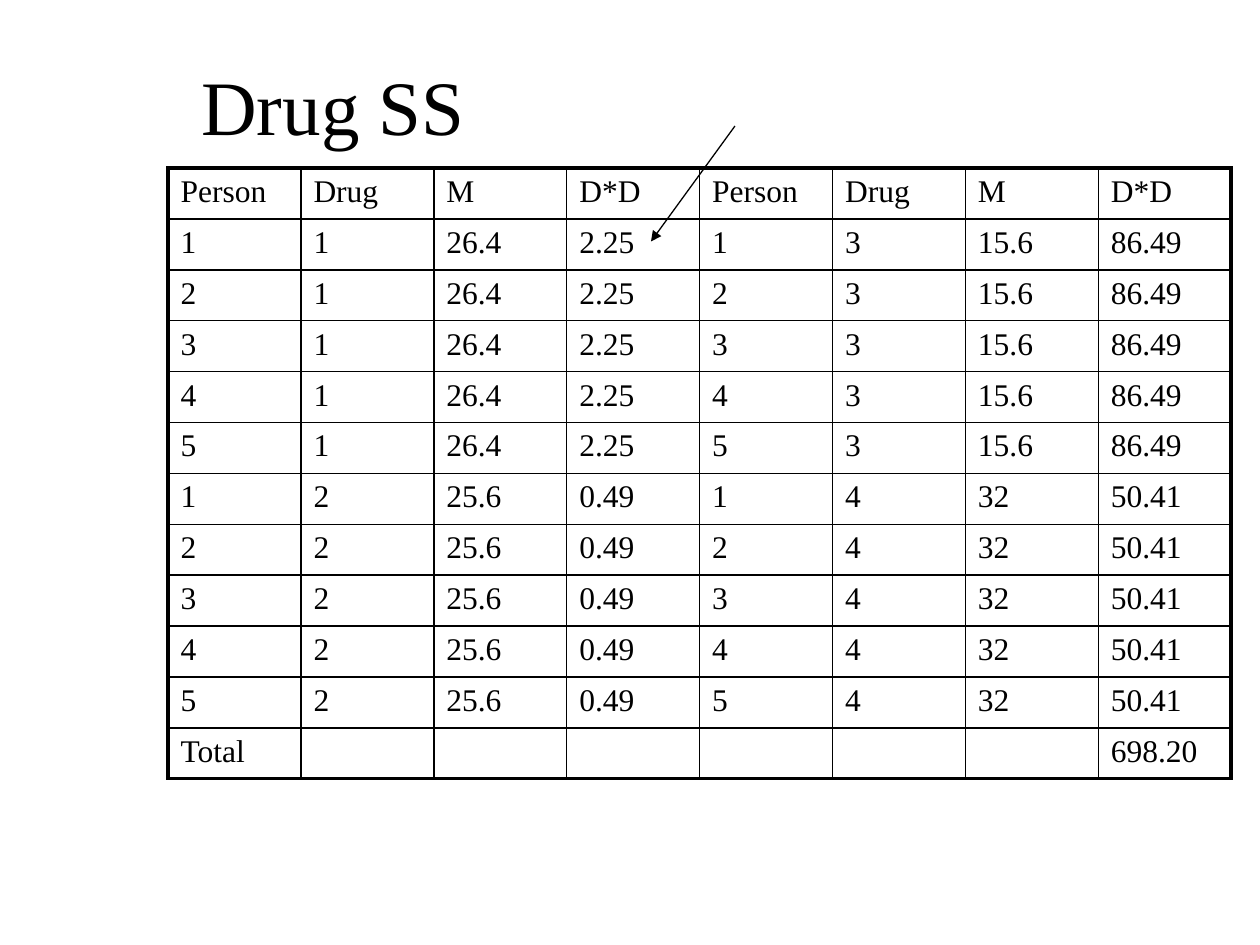
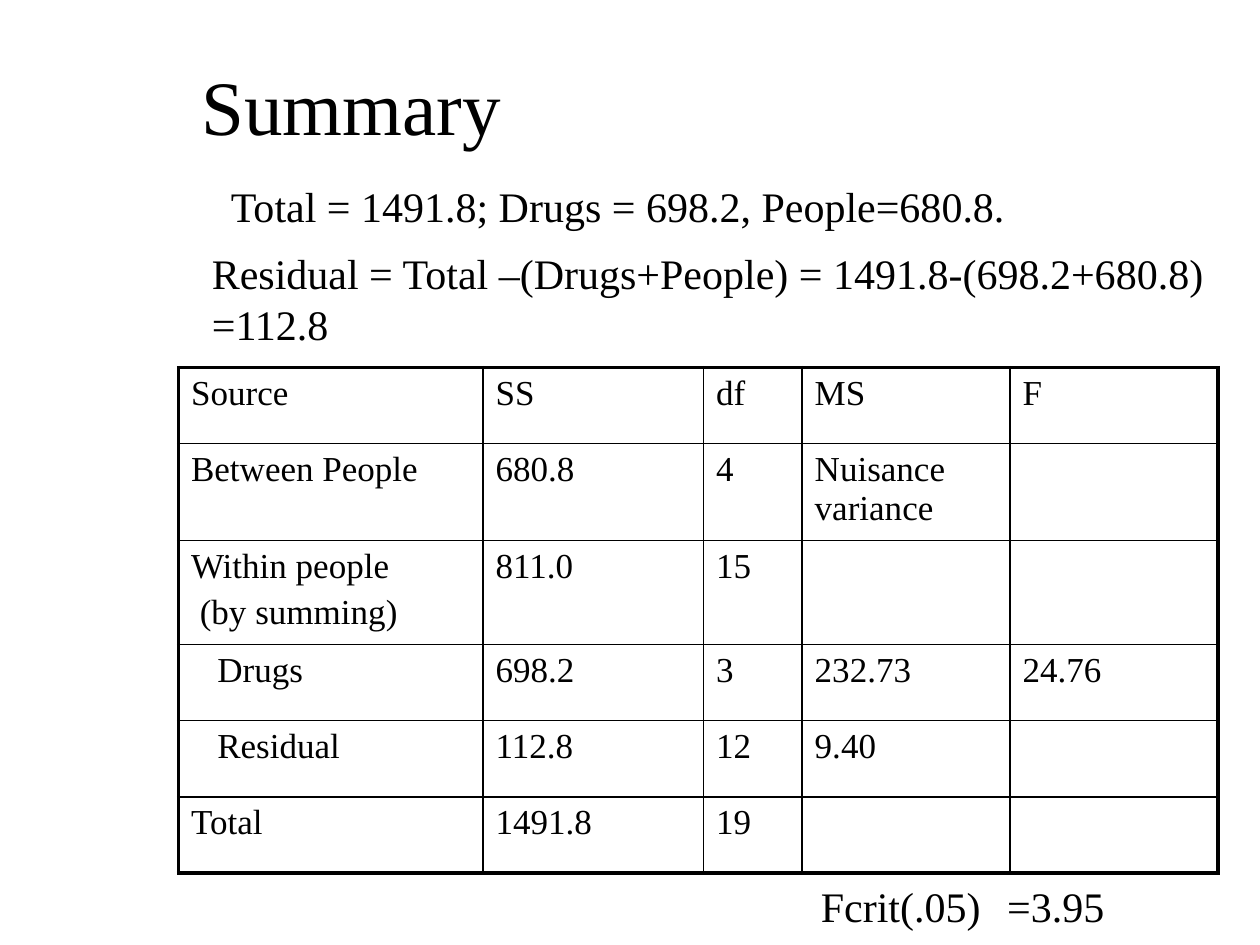
from dataclasses import dataclass

from pptx import Presentation
from pptx.dml.color import RGBColor
from pptx.enum.shapes import MSO_CONNECTOR
from pptx.enum.text import MSO_ANCHOR, MSO_AUTO_SIZE
from pptx.oxml.ns import qn
from pptx.util import Inches, Pt
from lxml.etree import SubElement

COLUMNS, ROWS = 120, 90
PEOPLE = range(1, 6)
DRUG_MEANS = {1: 26.4, 2: 25.6, 3: 15.6, 4: 32}
GRAND_MEAN = sum(DRUG_MEANS.values()) / len(DRUG_MEANS)


@dataclass(frozen=True)
class Theme:
    """Colours, type sizes and line widths of the deck."""

    font: str = "Times New Roman"
    ink: str = "000000"
    paper: str = "FFFFFF"
    title: int = 44
    body: int = 24
    summary: int = 20
    scores: int = 18
    frame: float = 2.25
    rule: float = 1
    arrow: float = 0.75


def write(frame, text, *, theme, size, indents=None):
    """Fill a text frame, one paragraph per line, with optional indents by line."""
    for position, line in enumerate(text.split("\n")):
        paragraph = frame.add_paragraph() if position else frame.paragraphs[0]
        if indents and line in indents:
            paragraph._p.get_or_add_pPr().set("marL", str(Pt(indents[line])))
        if position and indents:
            paragraph.space_before = Pt(size * 0.2)
        paragraph.font.name = theme.font
        paragraph.font.size = Pt(size)
        paragraph.font.color.rgb = RGBColor.from_string(theme.ink)
        paragraph.add_run().text = line


class Deck:
    """Holds the theme and the current slide, measured on a grid."""

    def __init__(self, theme):
        """Start an empty deck."""
        self.theme = theme
        self.presentation = Presentation()
        self.presentation.slide_width = Inches(10)
        self.presentation.slide_height = Inches(7.5)
        self.slide = None

    def x(self, columns):
        """Turn grid columns into a length."""
        return round(self.presentation.slide_width * columns / COLUMNS)

    def y(self, rows):
        """Turn grid rows into a length."""
        return round(self.presentation.slide_height * rows / ROWS)

    def box(self, left, top, width, height):
        """Turn a grid area into slide lengths."""
        return self.x(left), self.y(top), self.x(width), self.y(height)

    def add_slide(self, title):
        """Start a slide with its title."""
        self.slide = self.presentation.slides.add_slide(self.presentation.slide_layouts[6])
        self.slide.background.fill.solid()
        self.slide.background.fill.fore_color.rgb = RGBColor.from_string(self.theme.paper)
        frame = self.slide.shapes.add_textbox(*self.box(18, 4, 93, 12)).text_frame
        frame.word_wrap = True
        frame.vertical_anchor = MSO_ANCHOR.MIDDLE
        write(frame, title, theme=self.theme, size=self.theme.title)

    def add_text(self, text, *area):
        """Add body text that keeps its own line breaks."""
        frame = self.slide.shapes.add_textbox(*self.box(*area)).text_frame
        frame.word_wrap = False
        frame.auto_size = MSO_AUTO_SIZE.SHAPE_TO_FIT_TEXT
        write(frame, text, theme=self.theme, size=self.theme.body)

    def add_table(self, records, left, top, widths, heights, size, indents=None):
        """Add a ruled table with a heavier outer frame."""
        area = self.box(left, top, sum(widths), sum(heights))
        table = self.slide.shapes.add_table(len(records), len(widths), *area).table
        table.first_row = table.horz_banding = False
        for column, width in zip(table.columns, widths):
            column.width = self.x(width)
        for row, height in zip(table.rows, heights):
            row.height = self.y(height)
        for r, record in enumerate(records):
            for c, value in enumerate(record):
                cell = table.cell(r, c)
                write(cell.text_frame, value, theme=self.theme, size=size, indents=indents)
                outer = {"L": c == 0, "R": c == len(widths) - 1,
                         "T": r == 0, "B": r == len(records) - 1}
                self.rule_cell(cell, outer)
                cell.fill.background()

    def rule_cell(self, cell, outer):
        """Draw the four borders of a cell."""
        properties = cell._tc.get_or_add_tcPr()
        for side, is_outer in outer.items():
            width = self.theme.frame if is_outer else self.theme.rule
            border = SubElement(properties, qn(f"a:ln{side}"), w=str(Pt(width)))
            fill = SubElement(border, qn("a:solidFill"))
            SubElement(fill, qn("a:srgbClr"), val=self.theme.ink)

    def add_arrow(self, start, end):
        """Draw an arrow between two grid points."""
        arrow = self.slide.shapes.add_connector(
            MSO_CONNECTOR.STRAIGHT,
            self.x(start[0]), self.y(start[1]), self.x(end[0]), self.y(end[1]))
        arrow.line.color.rgb = RGBColor.from_string(self.theme.ink)
        arrow.line.width = Pt(self.theme.arrow)
        SubElement(arrow.line._get_or_add_ln(), qn("a:tailEnd"), type="triangle")
        SubElement(arrow._element.spPr, qn("a:effectLst"))


def score(person, drug):
    """Give one person's score cells for a drug."""
    mean = DRUG_MEANS[drug]
    return [str(person), str(drug), f"{mean:g}", f"{(mean - GRAND_MEAN) ** 2:.2f}"]


def drug_slide(deck):
    """Build the sum of squares for drugs."""
    deck.add_slide("Drug SS")
    total = len(PEOPLE) * sum((mean - GRAND_MEAN) ** 2 for mean in DRUG_MEANS.values())
    records = [["Person", "Drug", "M", "D*D"] * 2]
    records += [score(person, first) + score(person, second)
                for first, second in ((1, 3), (2, 4)) for person in PEOPLE]
    records.append(["Total"] + [""] * 6 + [f"{total:.2f}"])
    deck.add_table(records, 16, 16, [12.66] * 8, [4.85] * 12, deck.theme.scores)
    deck.add_arrow((70, 12), (62, 23))


def summary_slide(deck):
    """Build the summary of sources of variance."""
    deck.add_slide("Summary")
    deck.add_text("Total = 1491.8; Drugs = 698.2, People=680.8.", 20.8, 16.6, 76.3, 6)
    deck.add_text("Residual = Total –(Drugs+People) = 1491.8-(698.2+680.8)\n=112.8",
                  19, 23, 97.2, 10.8)
    records = [
        ["Source", "SS", "df", "MS", "F"],
        ["Between People", "680.8", "4", "Nuisance variance", ""],
        ["Within people\n(by summing)", "811.0", "15", "", ""],
        ["Drugs", "698.2", "3", "232.73", "24.76"],
        ["Residual", "112.8", "12", "9.40", ""],
        ["Total", "1491.8", "19", "", ""],
    ]
    deck.add_table(records, 17, 35, [29, 21, 9.4, 19.8, 19.8],
                   [7.25, 9.25, 9.9, 7.25, 7.25, 7.25], deck.theme.summary,
                   indents={"(by summing)": 5, "Drugs": 15, "Residual": 15})
    deck.add_text("Fcrit(.05)", 77, 83.3, 17.75, 6)
    deck.add_text("=3.95", 94.75, 83.3, 11.8, 6)


def main():
    """Build and save the deck."""
    deck = Deck(Theme())
    drug_slide(deck)
    summary_slide(deck)
    deck.presentation.save("out.pptx")


if __name__ == "__main__":
    main()
